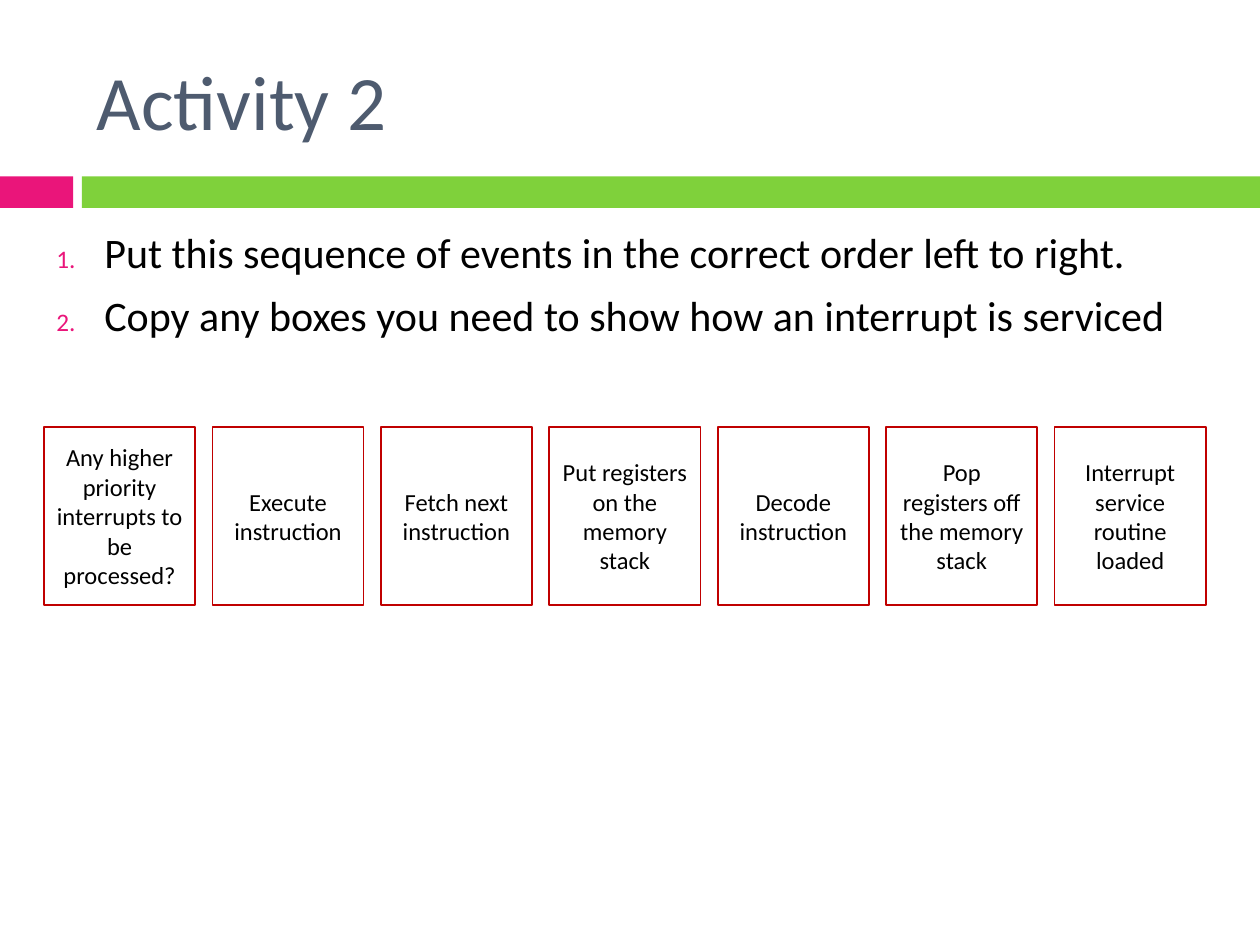
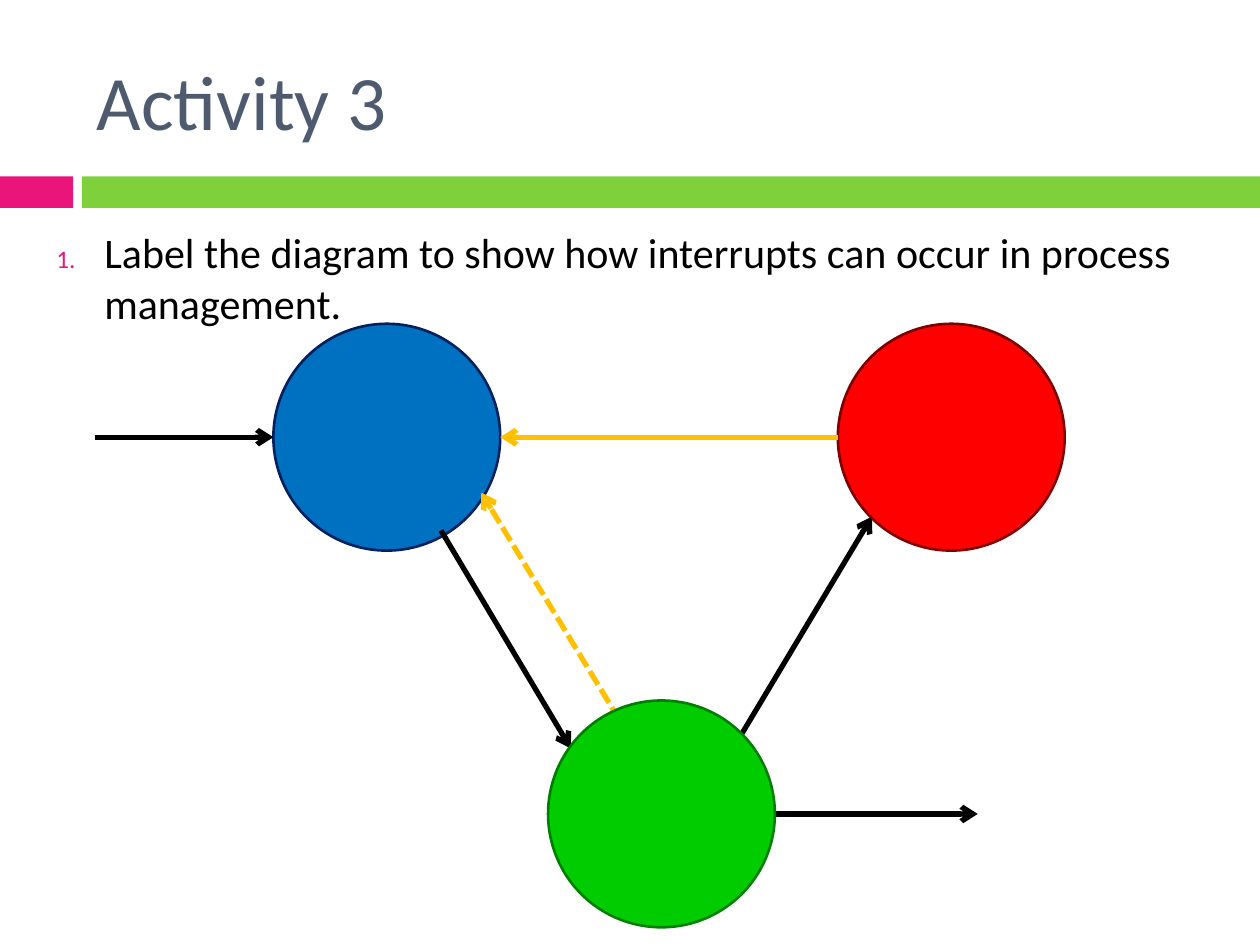
from dataclasses import dataclass
from typing import Any

from lxml import etree
from pptx import Presentation
from pptx.dml.color import RGBColor
from pptx.enum.dml import MSO_LINE
from pptx.enum.shapes import MSO_CONNECTOR, MSO_SHAPE
from pptx.enum.text import MSO_ANCHOR, PP_ALIGN
from pptx.oxml.ns import qn
from pptx.util import Inches, Pt

RECTANGLE = MSO_SHAPE.RECTANGLE
OVAL = MSO_SHAPE.OVAL
STRAIGHT = MSO_CONNECTOR.STRAIGHT
DASHED = MSO_LINE.SQUARE_DOT
TOP = MSO_ANCHOR.TOP
MIDDLE = MSO_ANCHOR.MIDDLE
LEFT = PP_ALIGN.LEFT
CENTER = PP_ALIGN.CENTER

WHITE = RGBColor(0xFF, 0xFF, 0xFF)
BLACK = RGBColor(0x00, 0x00, 0x00)
SLATE = RGBColor(0x4E, 0x5B, 0x6F)
PINK = RGBColor(0xEA, 0x15, 0x7A)
LIME = RGBColor(0x7F, 0xD1, 0x3B)
DARK_RED = RGBColor(0xC0, 0x00, 0x00)
BLUE = RGBColor(0x00, 0x70, 0xC0)
NAVY = RGBColor(0x00, 0x20, 0x60)
RED = RGBColor(0xFF, 0x00, 0x00)
MAROON = RGBColor(0x80, 0x00, 0x00)
GREEN = RGBColor(0x00, 0xCC, 0x00)
DARK_GREEN = RGBColor(0x00, 0x80, 0x00)
AMBER = RGBColor(0xFF, 0xC0, 0x00)

FONT = "Calibri"
COLUMNS, ROWS = 100, 75
SLIDE_WIDTH, SLIDE_HEIGHT = Inches(10), Inches(7.5)


def across(columns: float) -> int:
    return round(SLIDE_WIDTH * columns / COLUMNS)


def down(rows: float) -> int:
    return round(SLIDE_HEIGHT * rows / ROWS)


@dataclass(frozen=True)
class Area:
    left: float
    top: float
    width: float
    height: float

    def place(self) -> tuple[int, int, int, int]:
        return across(self.left), down(self.top), across(self.width), down(self.height)


@dataclass(frozen=True)
class TextStyle:
    size: float
    color: RGBColor
    anchor: Any
    align: Any
    side_inset: float = 1


@dataclass(frozen=True)
class State:
    center: tuple[float, float]
    fill: RGBColor
    outline: RGBColor


@dataclass(frozen=True)
class Arrow:
    start: tuple[float, float]
    end: tuple[float, float]
    color: RGBColor = BLACK
    dash: Any = None


TITLE_AREA = Area(6.7, 2.5, 89.2, 10.8)
BODY_AREA = Area(3.5, 17.5, 92.3, 19.3)
BANDS = (
    (Area(0, 14, 5.8, 2.5), PINK),
    (Area(6.5, 14, 93.5, 2.5), LIME),
)
TITLE_STYLE = TextStyle(44, SLATE, MIDDLE, LEFT)
BODY_STYLE = TextStyle(24, BLACK, TOP, LEFT)
EVENT_STYLE = TextStyle(14, BLACK, MIDDLE, CENTER, side_inset=0.9)
NUMBER_INDENT = 3.8

EVENTS = (
    "Any higher priority interrupts to be processed?",
    "Execute instruction",
    "Fetch next instruction",
    "Put registers on the memory stack",
    "Decode instruction",
    "Pop registers off the memory stack",
    "Interrupt service routine loaded",
)
EVENT_ROW = Area(3.5, 33.9, 92.2, 14.1)
EVENT_WIDTH = 12

DIAMETER = 18
RADIUS = DIAMETER / 2
BLUE_STATE = State((30.7, 34.7), BLUE, NAVY)
RED_STATE = State((75.5, 34.7), RED, MAROON)
GREEN_STATE = State((52.5, 64.6), GREEN, DARK_GREEN)


def side_of(state: State, direction: int) -> tuple[float, float]:
    return state.center[0] + direction * RADIUS, state.center[1]


ARROWS = (
    Arrow((7.5, 34.7), side_of(BLUE_STATE, -1)),
    Arrow((35, 42.1), (45.3, 59.4)),
    Arrow((58.9, 58.2), (69.2, 41)),
    Arrow(side_of(RED_STATE, -1), side_of(BLUE_STATE, 1), AMBER),
    Arrow((49.2, 57.2), (38.2, 39.1), AMBER, DASHED),
    Arrow(side_of(GREEN_STATE, 1), (77.6, 64.6)),
)


def apply(target: Any, values: dict[str, Any]) -> None:
    for name, value in values.items():
        setattr(target, name, value)


def write(box: Any, lines: tuple[str, ...], style: TextStyle) -> None:
    frame = box.text_frame
    inset = across(style.side_inset)
    apply(frame, {
        "word_wrap": True,
        "vertical_anchor": style.anchor,
        "margin_left": inset,
        "margin_right": inset,
    })
    for index, line in enumerate(lines):
        para = frame.add_paragraph() if index else frame.paragraphs[0]
        para.alignment = style.align
        span = para.add_run()
        span.text = line
        apply(span.font, {"name": FONT, "size": Pt(style.size)})
        span.font.color.rgb = style.color


def number(para: Any) -> None:
    para.space_before = Pt(7)
    properties = para._p.get_or_add_pPr()
    indent = across(NUMBER_INDENT)
    properties.set("marL", str(indent))
    properties.set("indent", str(-indent))
    color = etree.SubElement(properties, qn("a:buClr"))
    etree.SubElement(color, qn("a:srgbClr"), val=str(PINK))
    etree.SubElement(properties, qn("a:buSzPct"), val="60000")
    etree.SubElement(properties, qn("a:buAutoNum"), type="arabicPeriod")


def add_form(page: Any, kind: Any, area: Area, fill: RGBColor | None = None,
             outline: RGBColor | None = None, weight: float = 1) -> Any:
    shape = page.shapes.add_shape(kind, *area.place())
    shape.shadow.inherit = False
    if fill is None:
        shape.fill.background()
    else:
        shape.fill.solid()
        shape.fill.fore_color.rgb = fill
    if outline is None:
        shape.line.fill.background()
    else:
        shape.line.color.rgb = outline
        shape.line.width = Pt(weight)
    return shape


def add_activity(deck: Any, title: str, tasks: tuple[str, ...]) -> Any:
    page = deck.slides.add_slide(deck.slide_layouts[6])
    page.background.fill.solid()
    page.background.fill.fore_color.rgb = WHITE
    for area, color in BANDS:
        add_form(page, RECTANGLE, area, color)
    write(page.shapes.add_textbox(*TITLE_AREA.place()), (title,), TITLE_STYLE)
    body = page.shapes.add_textbox(*BODY_AREA.place())
    write(body, tasks, BODY_STYLE)
    for para in body.text_frame.paragraphs:
        number(para)
    return page


def add_events(page: Any) -> None:
    pitch = (EVENT_ROW.width - EVENT_WIDTH) / (len(EVENTS) - 1)
    for index, event in enumerate(EVENTS):
        area = Area(EVENT_ROW.left + index * pitch, EVENT_ROW.top,
                    EVENT_WIDTH, EVENT_ROW.height)
        write(add_form(page, RECTANGLE, area, outline=DARK_RED), (event,), EVENT_STYLE)


def add_state(page: Any, state: State) -> None:
    x, y = state.center
    area = Area(x - RADIUS, y - RADIUS, DIAMETER, DIAMETER)
    add_form(page, OVAL, area, state.fill, state.outline, 1.5)


def add_arrow(page: Any, arrow: Arrow) -> None:
    (x1, y1), (x2, y2) = arrow.start, arrow.end
    connector = page.shapes.add_connector(
        STRAIGHT, across(x1), down(y1), across(x2), down(y2))
    connector.line.color.rgb = arrow.color
    apply(connector.line, {"width": Pt(3), "dash_style": arrow.dash})
    properties = connector._element.spPr
    etree.SubElement(properties.find(qn("a:ln")), qn("a:tailEnd"), type="arrow")
    etree.SubElement(properties, qn("a:effectLst"))


def main() -> None:
    deck = Presentation()
    apply(deck, {"slide_width": SLIDE_WIDTH, "slide_height": SLIDE_HEIGHT})

    sequence = add_activity(deck, "Activity 2", (
        "Put this sequence of events in the correct order left to right.",
        "Copy any boxes you need to show how an interrupt is serviced",
    ))
    add_events(sequence)

    diagram = add_activity(deck, "Activity 3", (
        "Label the diagram to show how interrupts can occur in process management.",
    ))
    for state in (BLUE_STATE, RED_STATE):
        add_state(diagram, state)
    for arrow in ARROWS:
        add_arrow(diagram, arrow)
    add_state(diagram, GREEN_STATE)

    deck.save("out.pptx")


if __name__ == "__main__":
    main()
